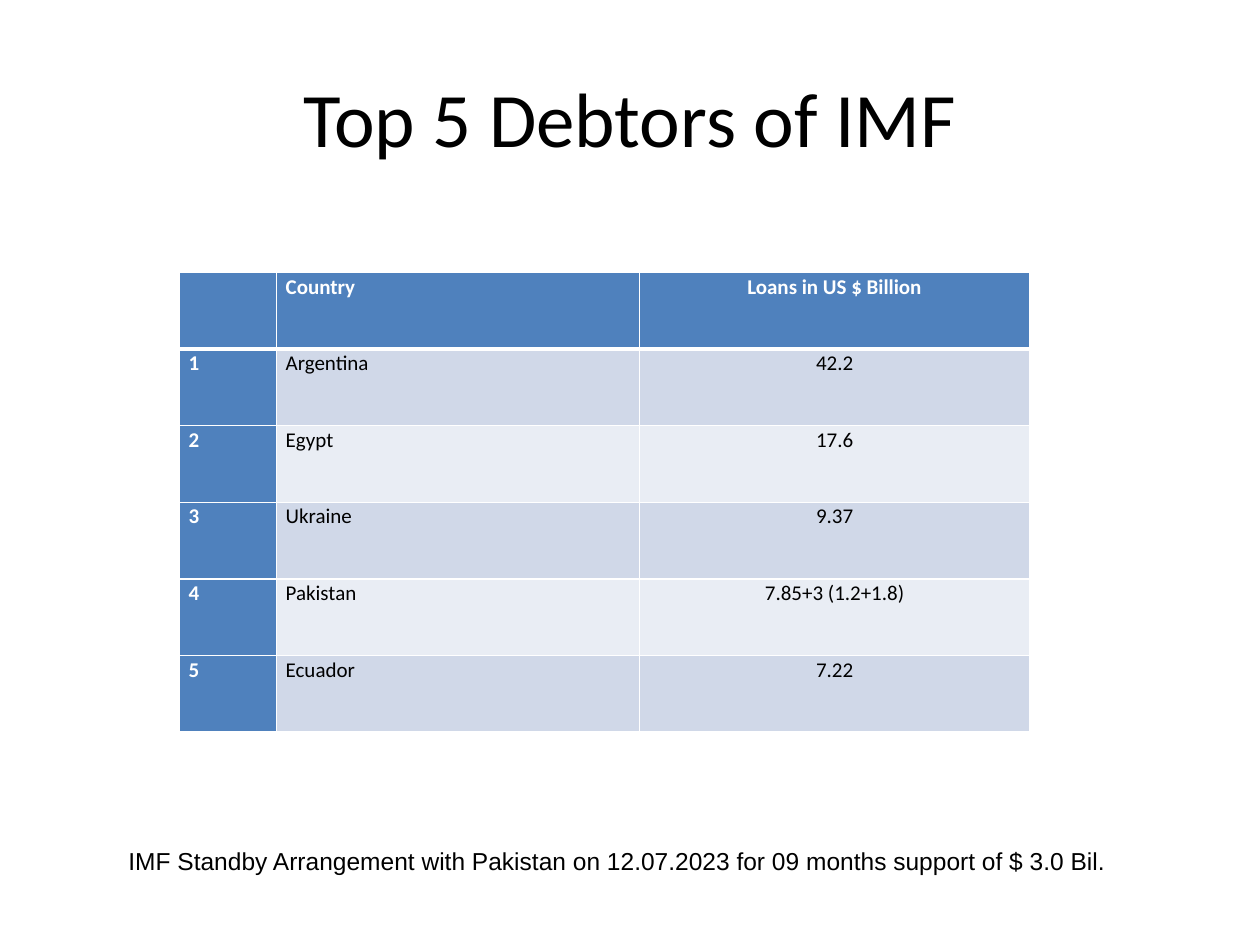
"""Build a slide with a table of the five largest IMF debtors."""
from typing import Any, NamedTuple

from lxml.etree import SubElement as Sub
from pptx import Presentation as Deck
from pptx.dml.color import RGBColor as Rgb
from pptx.enum.text import MSO_ANCHOR as Anchor, PP_ALIGN as Align
from pptx.oxml.ns import qn
from pptx.util import Cm, Pt

HUES = {"ink": "000000", "white": "FFFFFF", "head": "4F81BD",
        "odd": "D0D8E8", "even": "E9EDF4"}
WIDTHS = (1.96, 7.32, 7.87)
TALL = 1.545
CELL = {"margin_left": Cm(0.19), "margin_right": Cm(0.19),
        "margin_top": 0, "margin_bottom": 0}
GAPS = {"line_spacing": 1.07, "space_after": Pt(8)}


class Debt(NamedTuple):
    rank: str
    land: str
    loan: str


class Look(NamedTuple):
    face: str
    size: float
    hue: str = "ink"
    bold: bool = False
    align: Any = Align.LEFT


ROWS = (
    Debt("", "Country", "Loans in US $ Billion"),
    Debt("1", "Argentina", "42.2"),
    Debt("2", "Egypt", "17.6"),
    Debt("3", "Ukraine", "9.37"),
    Debt("4", "Pakistan", "7.85+3 (1.2+1.8)"),
    Debt("5", "Ecuador", "7.22"),
)
SIDES = (Align.JUSTIFY, Align.LEFT, Align.CENTER)


def apply(thing: Any, form: dict) -> None:
    for name, value in form.items():
        setattr(thing, name, value)


def place(shape: Any, left: float, top: float, wide: float, high: float) -> None:
    apply(shape, {"left": Cm(left), "top": Cm(top),
                  "width": Cm(wide), "height": Cm(high)})


def write(frame: Any, text: str, look: Look) -> Any:
    para = frame.paragraphs[0]
    para.alignment = look.align
    font = para.font
    if text:
        run = para.add_run()
        run.text = text
        font = run.font
    apply(font, {"name": look.face, "size": Pt(look.size), "bold": look.bold})
    font.color.rgb = Rgb.from_string(HUES[look.hue])
    return para


def edge(cell: Any, side: str, width: float) -> None:
    line = Sub(cell._tc.get_or_add_tcPr(), qn(f"a:ln{side}"), w=str(Pt(width)))
    Sub(Sub(line, qn("a:solidFill")), qn("a:srgbClr"), val=HUES["white"])


def draw_cell(cell: Any, text: str, row: int, col: int) -> None:
    head = row == 0 or col == 0
    tint = "head" if head else "odd" if row % 2 else "even"
    apply(cell, CELL)
    look = Look("Calibri", 12, "white" if head else "ink", head,
                Align.LEFT if row == 0 and col == 0 else SIDES[col])
    apply(write(cell.text_frame, text, look), GAPS)
    for side, width in {"L": 1, "R": 1, "T": 3 if row == 1 else 1,
                        "B": 3 if row == 0 else 1}.items():
        edge(cell, side, width)
    cell.fill.solid()
    cell.fill.fore_color.rgb = Rgb.from_string(HUES[tint])


def draw_table(slide: Any, left: float, top: float) -> None:
    grid = slide.shapes.add_table(
        len(ROWS), len(WIDTHS), Cm(left), Cm(top),
        Cm(sum(WIDTHS)), Cm(TALL * len(ROWS))).table
    grid.first_col = True
    for col, wide in zip(grid.columns, WIDTHS):
        col.width = Cm(wide)
    for row, debt in enumerate(ROWS):
        grid.rows[row].height = Cm(TALL)
        for col, text in enumerate(debt):
            draw_cell(grid.cell(row, col), text, row, col)


def main() -> None:
    deck = Deck()
    apply(deck, {"slide_width": Cm(25.4), "slide_height": Cm(19.05)})
    slide = deck.slides.add_slide(deck.slide_layouts[5])
    title = slide.shapes.title
    place(title, 1.27, 0.76, 22.86, 3.18)
    title.text_frame.vertical_anchor = Anchor.MIDDLE
    write(title.text_frame, "Top 5 Debtors of IMF",
          Look("Calibri", 44, align=Align.CENTER))
    draw_table(slide, 3.61, 5.49)
    note = slide.shapes.add_textbox(0, 0, 0, 0)
    place(note, 2.34, 16.92, 21.64, 0.86)
    apply(note.text_frame, {"word_wrap": True, "vertical_anchor": Anchor.MIDDLE})
    write(note.text_frame,
          "IMF Standby Arrangement with Pakistan on 12.07.2023 "
          "for 09 months support of $ 3.0 Bil.",
          Look("Arial", 14, align=Align.JUSTIFY))
    deck.save("out.pptx")


if __name__ == "__main__":
    main()
